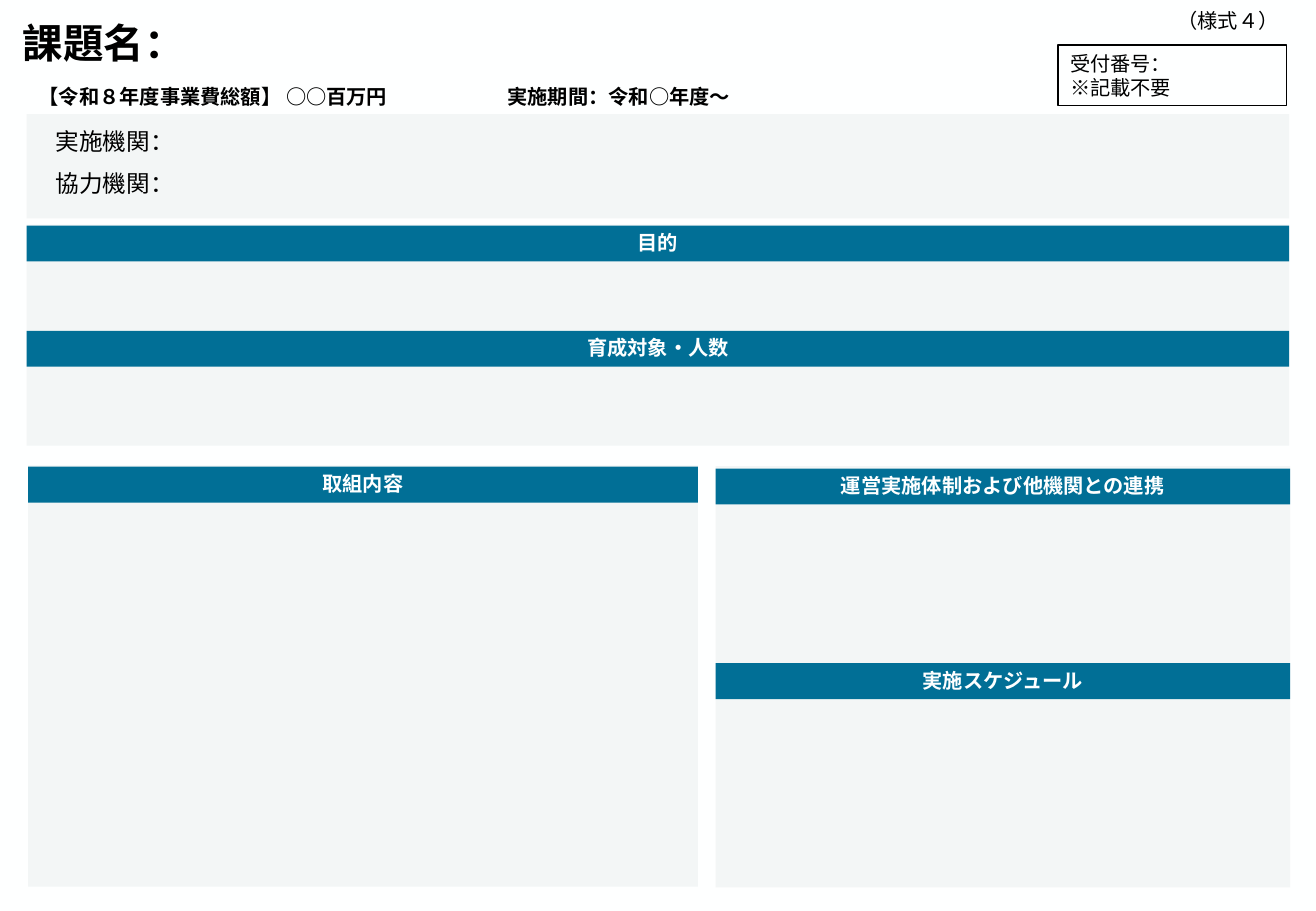
import pptx
import pptx.util
import pptx.dml.color
import pptx.enum.shapes
import pptx.enum.text
import pptx.oxml.ns
from lxml import etree

Cm, Pt = pptx.util.Cm, pptx.util.Pt
RGBColor = pptx.dml.color.RGBColor
MSO_SHAPE = pptx.enum.shapes.MSO_SHAPE
MSO_ANCHOR = pptx.enum.text.MSO_ANCHOR
PP_ALIGN = pptx.enum.text.PP_ALIGN
qn = pptx.oxml.ns.qn

FONT = "Noto Sans CJK JP"
BLACK = RGBColor(0x00, 0x00, 0x00)
WHITE = RGBColor(0xFE, 0xFF, 0xFF)
PANEL = RGBColor(0xF3, 0xF6, 0xF6)
BLUE = RGBColor(0x01, 0x6F, 0x96)

presentation = pptx.Presentation()
presentation.slide_width, presentation.slide_height = Cm(27.51), Cm(19.05)
slide = presentation.slides.add_slide(presentation.slide_layouts[6])
slide.background.fill.solid()
slide.background.fill.fore_color.rgb = WHITE


def add_box(left, top, width, height, fill=None, line=None, kind=MSO_SHAPE.RECTANGLE):
    shape = slide.shapes.add_shape(kind, Cm(left), Cm(top), Cm(width), Cm(height))
    shape.shadow.inherit = False
    if fill is None:
        shape.fill.background()
    else:
        shape.fill.solid()
        shape.fill.fore_color.rgb = fill
    if line is None:
        shape.line.fill.background()
    else:
        shape.line.color.rgb = line
        shape.line.width = Pt(0.75)
    return shape


def write(shape, lines, size=12, bold=False, color=BLACK, align=PP_ALIGN.LEFT,
          anchor=MSO_ANCHOR.TOP, margins=(0.25, 0.13), tab=None):
    frame = shape.text_frame
    frame.word_wrap = True
    frame.vertical_anchor = anchor
    frame.margin_left = frame.margin_right = Cm(margins[0])
    frame.margin_top = frame.margin_bottom = Cm(margins[1])
    frame.text = "\n".join(lines)
    for paragraph in frame.paragraphs:
        paragraph.alignment = align
        if tab:
            properties = paragraph._p.get_or_add_pPr()
            stops = etree.SubElement(properties, qn("a:tabLst"))
            etree.SubElement(stops, qn("a:tab"), pos=str(Cm(tab)), algn="l")
        font = paragraph.font
        font.size, font.bold, font.name = Pt(size), bold, FONT
        font.color.rgb = color
        # Japanese text takes the East Asian typeface
        defaults = paragraph._p.pPr.find(qn("a:defRPr"))
        etree.SubElement(defaults, qn("a:ea"), typeface=FONT)
    return frame


# Title
title = add_box(0.15, 0.13, 22.05, 1.5, kind=MSO_SHAPE.ROUNDED_RECTANGLE)
write(title, ["課題名："], size=24, bold=True, anchor=MSO_ANCHOR.MIDDLE)

# Background panels
FULL_LEFT, FULL_WIDTH = 0.56, 26.39
LEFT_COLUMN, LEFT_WIDTH = 0.59, 14.0
RIGHT_COLUMN, RIGHT_WIDTH = 14.96, 12.01
add_box(FULL_LEFT, 4.7, FULL_WIDTH, 4.62, PANEL)
add_box(LEFT_COLUMN, 9.73, LEFT_WIDTH, 8.81, PANEL)
add_box(RIGHT_COLUMN, 9.75, RIGHT_WIDTH, 8.81, PANEL)

# Institutions
institutions = add_box(FULL_LEFT, 2.39, FULL_WIDTH, 2.18, PANEL)
frame = write(institutions, ["実施機関：", "協力機関："], size=14, margins=(0.6, 0.4))
for paragraph in frame.paragraphs:
    paragraph.line_spacing = Pt(13)
    paragraph.space_after = Pt(12)

# Budget and period
budget = slide.shapes.add_textbox(Cm(0.56), Cm(1.63), Cm(18.2), Cm(0.91))
write(budget, ["【令和８年度事業費総額】 ○○百万円\t実施期間：令和○年度～"], bold=True, tab=9.8)

# Form number and receipt box
form_number = slide.shapes.add_textbox(Cm(22.94), Cm(0.05), Cm(4.04), Cm(0.76))
write(form_number, ["（様式４）"], align=PP_ALIGN.RIGHT)
receipt = add_box(22.12, 0.94, 4.78, 1.27, line=BLACK)
write(receipt, ["受付番号：", "※記載不要"])

# Section headings
for heading, left, top, width in [
    ("目的", FULL_LEFT, 4.72, FULL_WIDTH),
    ("育成対象・人数", FULL_LEFT, 6.92, FULL_WIDTH),
    ("取組内容", LEFT_COLUMN, 9.76, LEFT_WIDTH),
    ("運営実施体制および他機関との連携", RIGHT_COLUMN, 9.8, RIGHT_WIDTH),
    ("実施スケジュール", RIGHT_COLUMN, 13.87, RIGHT_WIDTH),
]:
    bar = add_box(left, top, width, 0.75, BLUE)
    write(bar, [heading], bold=True, color=WHITE, align=PP_ALIGN.CENTER, margins=(0, 0.1))

presentation.save("out.pptx")
